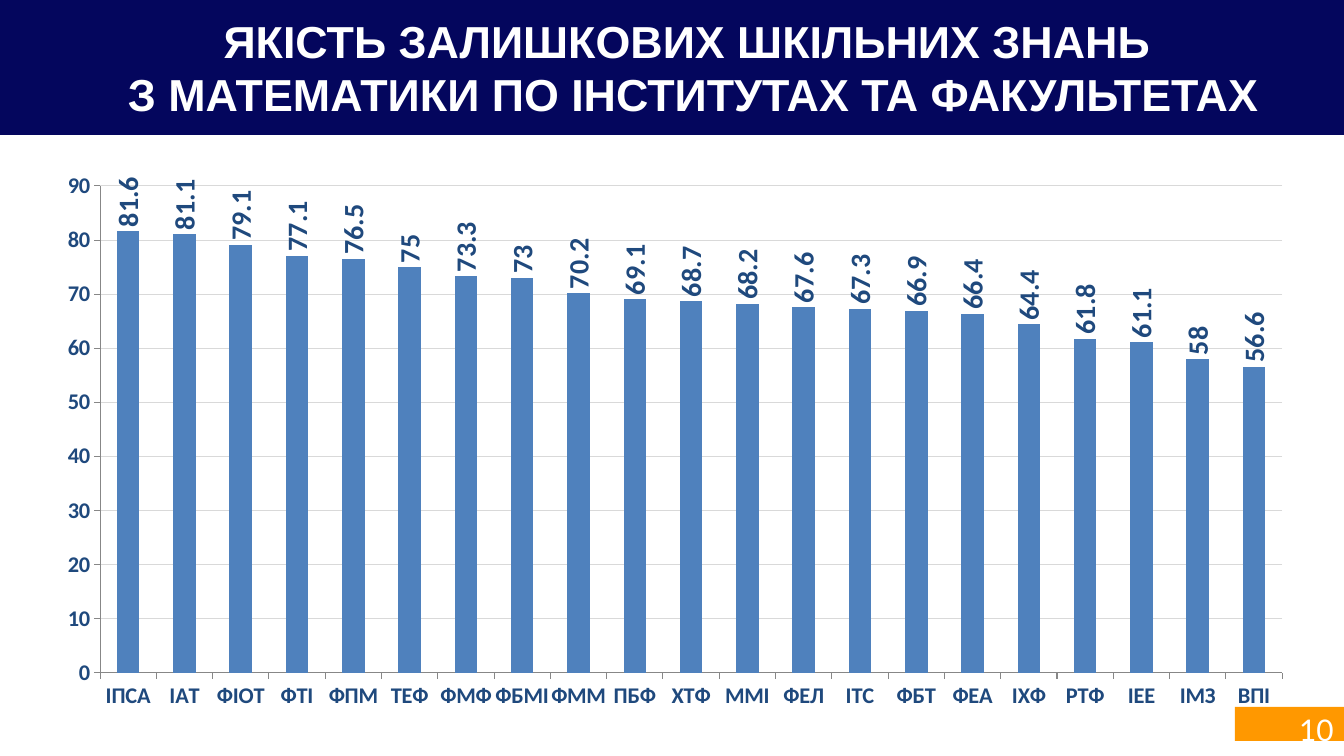
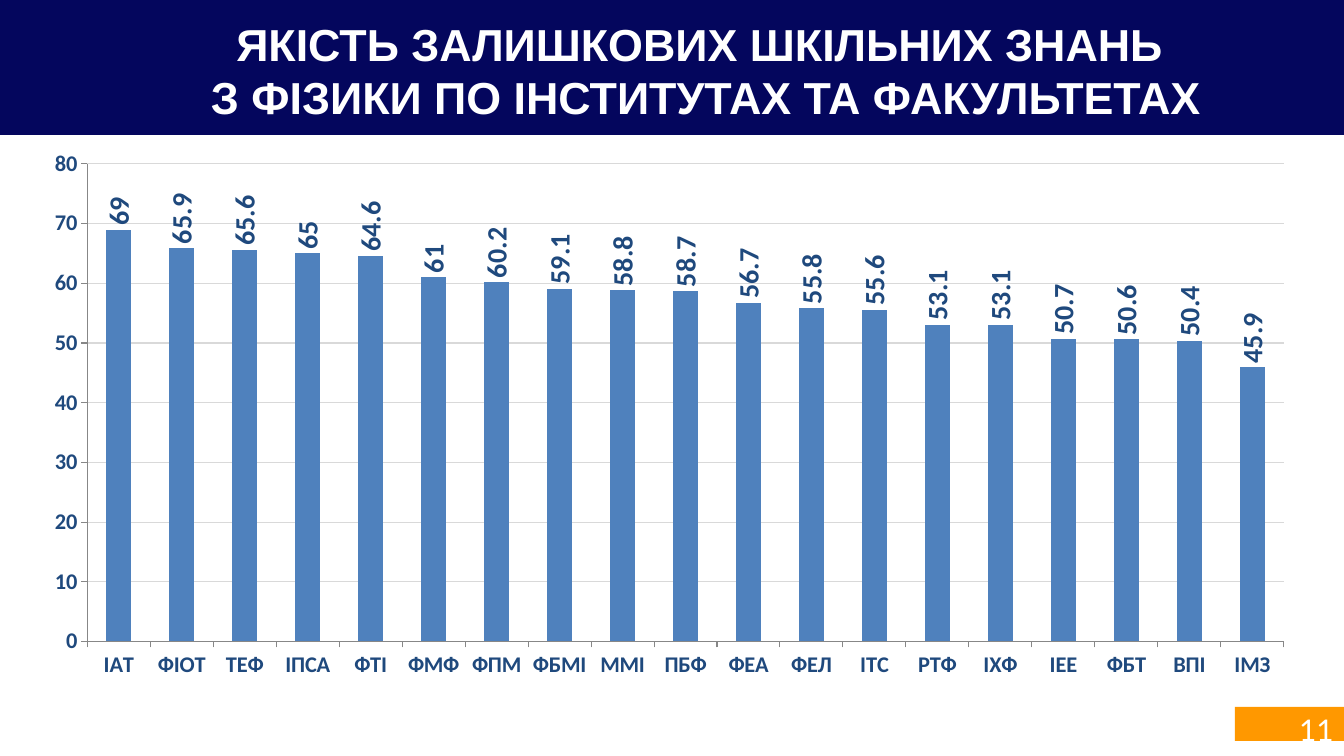
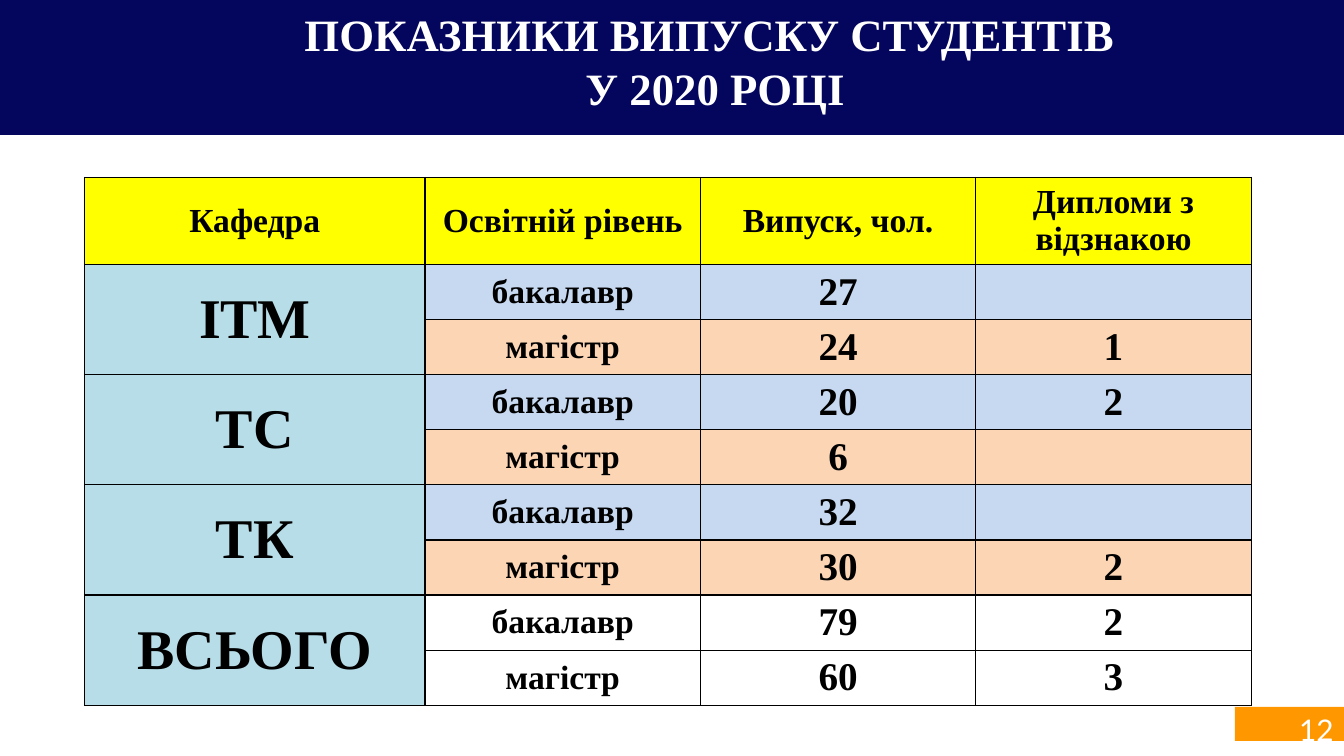
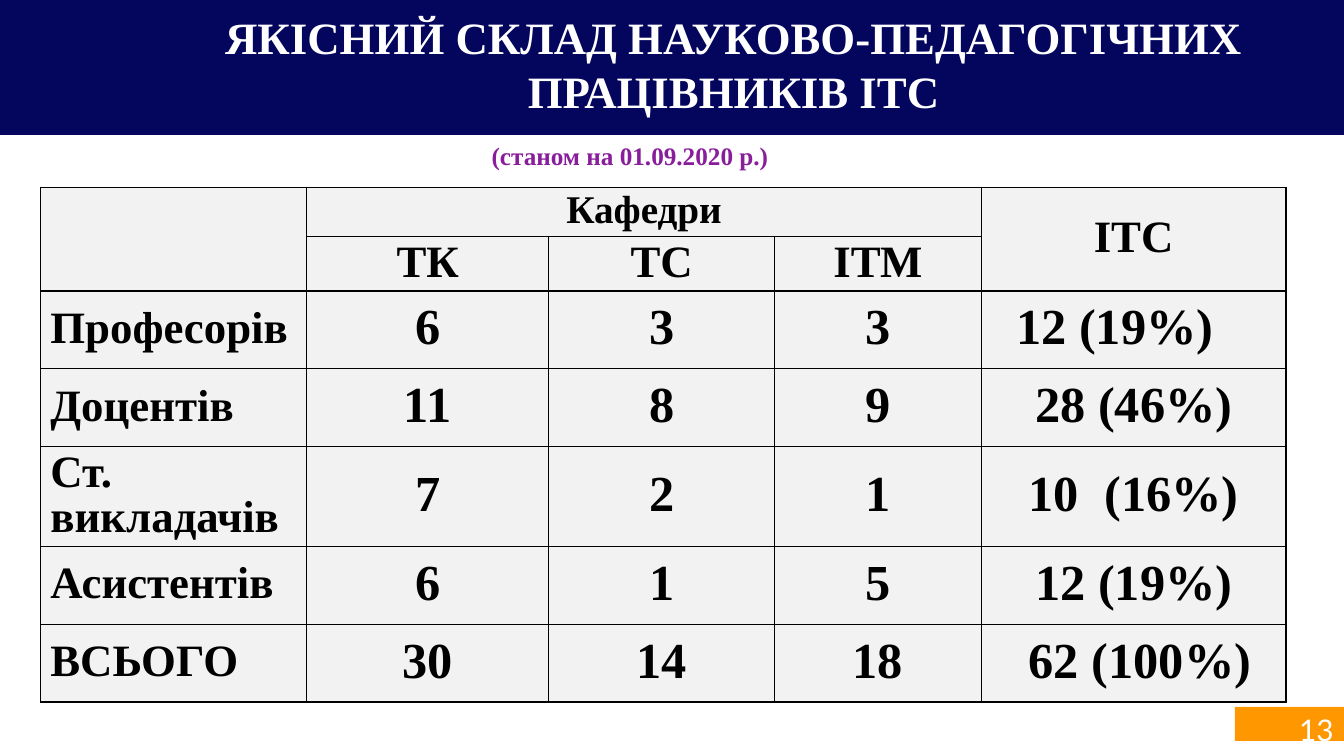
from dataclasses import dataclass
from typing import Optional

from lxml import etree
from pptx import Presentation
from pptx.chart.data import CategoryChartData
from pptx.dml.color import RGBColor
from pptx.enum.chart import XL_CHART_TYPE, XL_LABEL_POSITION, XL_TICK_MARK
from pptx.enum.shapes import MSO_SHAPE
from pptx.enum.text import MSO_ANCHOR, MSO_AUTO_SIZE, PP_ALIGN
from pptx.oxml.ns import qn
from pptx.util import Cm, Pt

# Enum members
COLUMNS = XL_CHART_TYPE.COLUMN_CLUSTERED
OUTSIDE_END = XL_LABEL_POSITION.OUTSIDE_END
TICK_OUT = XL_TICK_MARK.OUTSIDE
RECT = MSO_SHAPE.RECTANGLE
TOP, MIDDLE = MSO_ANCHOR.TOP, MSO_ANCHOR.MIDDLE
LEFT, CENTER, RIGHT = PP_ALIGN.LEFT, PP_ALIGN.CENTER, PP_ALIGN.RIGHT
NO_FIT, FIT_SHAPE = MSO_AUTO_SIZE.NONE, MSO_AUTO_SIZE.SHAPE_TO_FIT_TEXT

# Colours
WHITE, BLACK = "FFFFFF", "000000"
NAVY, ORANGE, PURPLE = "04065D", "FF9800", "891D9B"
BAR, CHART_TEXT, AXIS, GRID = "4F81BD", "1F497D", "878787", "D9D9D9"
YELLOW, AQUA, BLUE, PEACH, GREY = "FFFF00", "B7DEE8", "C6D9F1", "FCD5B5", "F2F2F2"

# Fonts
SANS, SERIF, NUMBER_FONT = "Arial", "Times New Roman", "Lato"
CHART_FONT, LABEL_FONT = "Cabin", "Calibri"

# Text rotation in 60000ths of a degree
AUTO_ROTATION, UPRIGHT = "-60000000", "-5400000"


@dataclass
class Box:
    """A frame in centimetres."""
    left: float
    top: float
    width: float
    height: float

    def emu(self) -> tuple:
        return Cm(self.left), Cm(self.top), Cm(self.width), Cm(self.height)


@dataclass
class Cell:
    text: str
    size: float
    fill: str
    align: PP_ALIGN = CENTER
    anchor: MSO_ANCHOR = MIDDLE
    rows: int = 1
    cols: int = 1
    pad_left: float = 0     # extra margins in centimetres
    pad_right: float = 0
    pad_top: float = 0


@dataclass
class TableStyle:
    side: float             # cell margins in centimetres
    end: float
    spacing: Optional[float] = None


SLIDE_W, SLIDE_H = 33.87, 19.05
BAND = Box(0, 0, SLIDE_W, 3.4)
TAB = Box(31.12, 17.81, 2.75, 0.86)
NUMBER = Box(30.66, 17.81, 3.2, 0.86)


def rgb(color: str) -> RGBColor:
    return RGBColor.from_string(color)


def set_font(font, size: float, name: str, color: str, bold: bool = False) -> None:
    font.size = Pt(size)
    font.name = name
    font.bold = bold
    font.color.rgb = rgb(color)


def add_run(p, text: str, size: float, name: str, color: str, bold: bool = True) -> None:
    r = p.add_run()
    r.text = text
    set_font(r.font, size, name, color, bold)


def add_rect(s, box: Box, color: str):
    sp = s.shapes.add_shape(RECT, *box.emu())
    sp.shadow.inherit = False
    sp.fill.solid()
    sp.fill.fore_color.rgb = rgb(color)
    sp.line.fill.background()
    return sp


def add_slide(prs, number: int, title: str, box: Box, font: str):
    """Add a slide with its band, title and page number."""
    s = prs.slides.add_slide(prs.slide_layouts[5])
    sp = s.shapes.title
    for part, color in ((TAB, ORANGE), (BAND, NAVY)):
        sp.element.addprevious(add_rect(s, part, color).element)

    # Title
    sp.left, sp.top, sp.width, sp.height = box.emu()
    tf = sp.text_frame
    tf.word_wrap = True
    tf.auto_size = NO_FIT
    tf.vertical_anchor = MIDDLE
    p = tf.paragraphs[0]
    p.alignment = CENTER
    for i, line in enumerate(title.split("\n")):
        if i:
            p.add_line_break()
        add_run(p, line, 32, font, WHITE)

    # Page number
    tf = s.shapes.add_textbox(*NUMBER.emu()).text_frame
    tf.word_wrap = True
    p = tf.paragraphs[0]
    p.alignment = RIGHT
    add_run(p, str(number), 21.3, NUMBER_FONT, WHITE, bold=False)
    return s


def set_line(line, color: str) -> None:
    line.color.rgb = rgb(color)
    line.width = Pt(0.75)


def add_bars(s, box: Box, scores: dict, top: int) -> None:
    data = CategoryChartData()
    data.categories = list(scores)
    data.add_series("Series 1", list(scores.values()))
    chart = s.shapes.add_chart(COLUMNS, *box.emu(), data).chart
    chart.has_legend = False
    chart.has_title = False
    set_font(chart.font, 10, CHART_FONT, BLACK)

    # Axes
    for axis in (chart.category_axis, chart.value_axis):
        axis.major_tick_mark = TICK_OUT
        set_font(axis.tick_labels.font, 16, LABEL_FONT, CHART_TEXT, bold=True)
        set_line(axis.format.line, AXIS)
    # Automatic rotation keeps each category name on one line
    chart.category_axis._element.get_or_add_txPr().bodyPr.set("rot", AUTO_ROTATION)
    values = chart.value_axis
    values.minimum_scale, values.maximum_scale, values.major_unit = 0, top, 10
    set_line(values.major_gridlines.format.line, GRID)

    # Bars and upright value labels
    plot = chart.plots[0]
    plot.gap_width = 150
    plot.vary_by_categories = False
    series = plot.series[0]
    series.format.fill.solid()
    series.format.fill.fore_color.rgb = rgb(BAR)
    labels = series.data_labels
    labels.show_value = True
    labels.position = OUTSIDE_END
    set_font(labels.font, 20, LABEL_FONT, CHART_TEXT, bold=True)
    labels._element.get_or_add_txPr().bodyPr.set("rot", UPRIGHT)


def set_borders(cell) -> None:
    tc_pr = cell._tc.get_or_add_tcPr()
    for side in ("a:lnL", "a:lnR", "a:lnT", "a:lnB"):
        ln = etree.SubElement(tc_pr, qn(side), w=str(Pt(1)))
        fill = etree.SubElement(ln, qn("a:solidFill"))
        etree.SubElement(fill, qn("a:srgbClr"), val=BLACK)


def fill_cell(cell, item: Cell, style: TableStyle) -> None:
    cell.fill.solid()
    cell.fill.fore_color.rgb = rgb(item.fill)
    cell.vertical_anchor = item.anchor
    cell.margin_left = Cm(style.side + item.pad_left)
    cell.margin_right = Cm(style.side + item.pad_right)
    cell.margin_top = Cm(style.end + item.pad_top)
    cell.margin_bottom = Cm(style.end)
    p = cell.text_frame.paragraphs[0]
    p.alignment = item.align
    if style.spacing:
        p.line_spacing = style.spacing
    if item.text:
        add_run(p, item.text, item.size, SERIF, BLACK)


def add_grid(s, left: float, top: float, widths: list, heights: list,
             rows: list, style: TableStyle) -> None:
    """Draw a table; None marks a place covered by a merged cell."""
    box = Box(left, top, sum(widths), sum(heights))
    table = s.shapes.add_table(len(heights), len(widths), *box.emu()).table
    table.first_row = table.horz_banding = False
    for column, width in zip(table.columns, widths):
        column.width = Cm(width)
    for row, height in zip(table.rows, heights):
        row.height = Cm(height)
    for y, row in enumerate(rows):
        for x, item in enumerate(row):
            cell = table.cell(y, x)
            set_borders(cell)
            if item is None:
                continue
            fill_cell(cell, item, style)
            if item.rows > 1 or item.cols > 1:
                cell.merge(table.cell(y + item.rows - 1, x + item.cols - 1))


MATHS = {
    "ІПСА": 81.6, "ІАТ": 81.1, "ФІОТ": 79.1, "ФТІ": 77.1, "ФПМ": 76.5, "ТЕФ": 75,
    "ФМФ": 73.3, "ФБМІ": 73, "ФММ": 70.2, "ПБФ": 69.1, "ХТФ": 68.7, "ММІ": 68.2,
    "ФЕЛ": 67.6, "ІТС": 67.3, "ФБТ": 66.9, "ФЕА": 66.4, "ІХФ": 64.4, "РТФ": 61.8,
    "ІЕЕ": 61.1, "ІМЗ": 58, "ВПІ": 56.6,
}
PHYSICS = {
    "ІАТ": 69, "ФІОТ": 65.9, "ТЕФ": 65.6, "ІПСА": 65, "ФТІ": 64.6, "ФМФ": 61,
    "ФПМ": 60.2, "ФБМІ": 59.1, "ММІ": 58.8, "ПБФ": 58.7, "ФЕА": 56.7, "ФЕЛ": 55.8,
    "ІТС": 55.6, "РТФ": 53.1, "ІХФ": 53.1, "ІЕЕ": 50.7, "ФБТ": 50.6, "ВПІ": 50.4,
    "ІМЗ": 45.9,
}
# Department: (graduates, honours) for bachelors, then masters
GRADUATES = {
    "ІТМ": (("27", ""), ("24", "1")),
    "ТС": (("20", "2"), ("6", "")),
    "ТК": (("32", ""), ("30", "2")),
    "ВСЬОГО": (("79", "2"), ("60", "3")),
}
STAFF = [
    ("Професорів", "6", "3", "3", "12 (19%)"),
    ("Доцентів", "11", "8", "9", "28 (46%)"),
    ("Ст. викладачів", "7", "2", "1", "10  (16%)"),
    ("Асистентів", "6", "1", "5", "12 (19%)"),
    ("ВСЬОГО", "30", "14", "18", "62 (100%)"),
]


def graduate_rows() -> list:
    heads = ("Кафедра", "Освітній рівень", "Випуск, чол.", "Дипломи з відзнакою")
    rows = [[Cell(head, 24, YELLOW) for head in heads]]
    for name, levels in GRADUATES.items():
        fills = (WHITE, WHITE) if name == "ВСЬОГО" else (BLUE, PEACH)
        for i, (level, fill) in enumerate(zip(("бакалавр", "магістр"), fills)):
            rows.append([None if i else Cell(name, 40, AQUA, rows=2),
                         Cell(level, 24, fill),
                         *(Cell(count, 28, fill) for count in levels[i])])
    return rows


def staff_rows() -> list:
    departments = [Cell(name, 32, GREY, anchor=TOP, pad_top=0.1)
                   for name in ("ТК", "ТС", "ІТМ")]
    rows = [
        [Cell("", 32, GREY, rows=2),
         Cell("Кафедри", 28, GREY, anchor=TOP, cols=3, pad_top=0.1),
         None, None, Cell("ІТС", 32, GREY, rows=2)],
        [None, *departments, None],
    ]
    for post, *counts in STAFF:
        rows.append([Cell(post, 32, GREY, LEFT), *(Cell(n, 36, GREY) for n in counts)])
    rows[2][-1].pad_right = 0.95
    rows[-1][-1].pad_left = 0.32
    return rows


def main() -> None:
    prs = Presentation()
    prs.slide_width, prs.slide_height = Cm(SLIDE_W), Cm(SLIDE_H)

    # School knowledge: mathematics and physics
    s = add_slide(prs, 10, "ЯКІСТЬ ЗАЛИШКОВИХ ШКІЛЬНИХ ЗНАНЬ \n"
                  "З МАТЕМАТИКИ ПО ІНСТИТУТАХ ТА ФАКУЛЬТЕТАХ",
                  Box(2.01, 0.46, 30.94, 2.46), SANS)
    add_bars(s, Box(1.07, 4.06, 31.88, 14.12), MATHS, 90)
    s = add_slide(prs, 11, "ЯКІСТЬ ЗАЛИШКОВИХ ШКІЛЬНИХ ЗНАНЬ \n"
                  "З ФІЗИКИ ПО ІНСТИТУТАХ ТА ФАКУЛЬТЕТАХ",
                  Box(2.13, 0.33, 31.34, 2.87), SANS)
    add_bars(s, Box(0.74, 3.51, 32.26, 13.87), PHYSICS, 80)

    # Graduates
    s = add_slide(prs, 12, "ПОКАЗНИКИ ВИПУСКУ СТУДЕНТІВ \nУ 2020 РОЦІ",
                  Box(2.92, 0, 30.2, 3.07), SERIF)
    add_grid(s, 2.13, 4.47, [8.58] + [6.94] * 3, [2.19] + [1.39] * 8,
             graduate_rows(), TableStyle(0.18, 0))

    # Teaching staff
    s = add_slide(prs, 13, "ЯКІСНИЙ СКЛАД НАУКОВО-ПЕДАГОГІЧНИХ ПРАЦІВНИКІВ ІТС",
                  Box(4.24, 0, 28.5, 3.2), SERIF)
    add_grid(s, 1.02, 4.72, [6.71, 6.1, 5.69, 5.21, 7.68],
             [1.23, 1.38, 1.96, 1.96, 2.52, 1.96, 1.96],
             staff_rows(), TableStyle(0.25, 0.03, 0.9))
    tf = s.shapes.add_textbox(*Box(12.14, 3.4, 7.57, 1.02).emu()).text_frame
    tf.word_wrap = False
    tf.auto_size = FIT_SHAPE
    add_run(tf.paragraphs[0], "(станом на 01.09.2020 р.)", 18, SERIF, PURPLE)

    prs.save("out.pptx")


if __name__ == "__main__":
    main()
